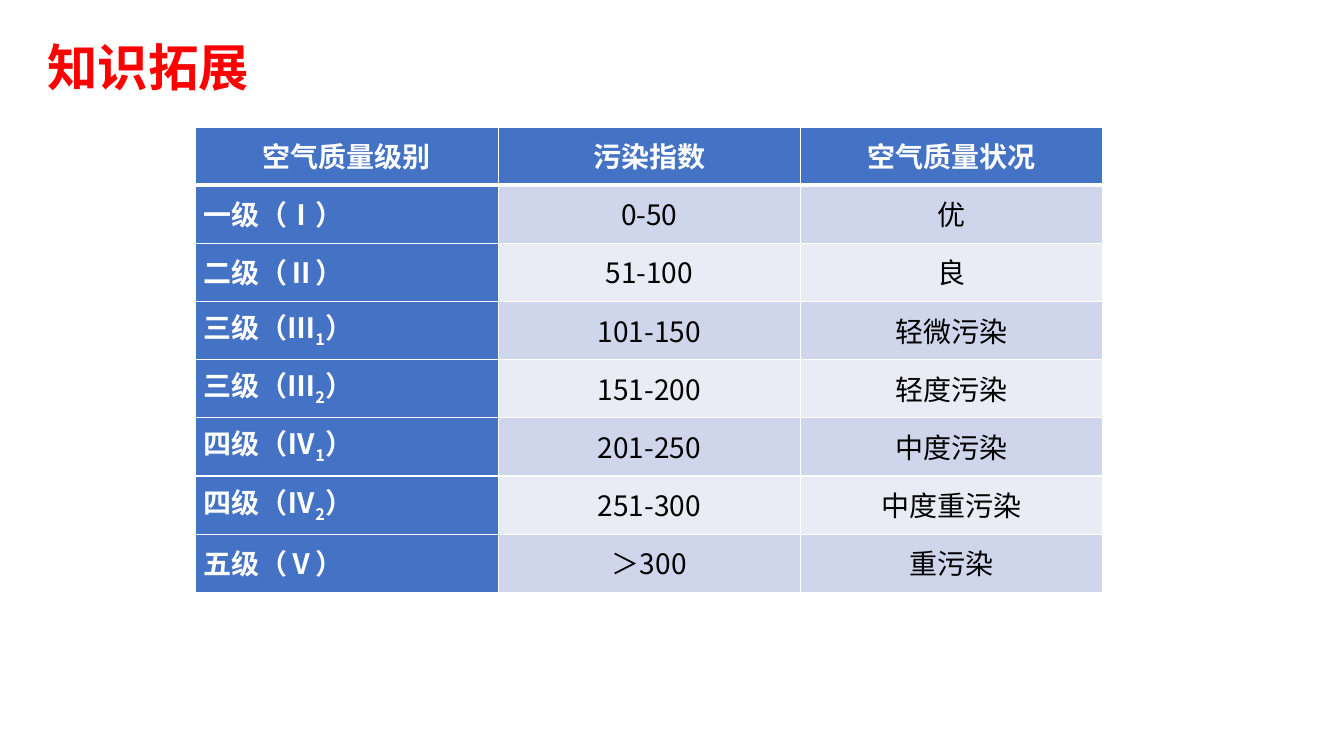
from dataclasses import dataclass

from lxml import etree
from pptx import Presentation
from pptx.dml.color import RGBColor
from pptx.enum.text import MSO_ANCHOR, PP_ALIGN
from pptx.oxml.ns import qn
from pptx.util import Pt

MIDDLE = MSO_ANCHOR.MIDDLE
LEFT, CENTER, JUSTIFY = PP_ALIGN.LEFT, PP_ALIGN.CENTER, PP_ALIGN.JUSTIFY


@dataclass(frozen=True)
class Theme:
    """Colours, type sizes and font of the slide."""
    font: str = "Noto Sans CJK SC"
    title_size: int = 36
    cell_size: int = 20
    line_spacing: int = 28
    title: str = "FF0000"
    heading_fill: str = "4472C4"
    heading_text: str = "FFFFFF"
    body_text: str = "000000"
    bands: tuple = ("CFD5EA", "E9EBF5")
    border: str = "FFFFFF"


THEME = Theme()
HEADINGS = ("空气质量级别", "污染指数", "空气质量状况")
LEVELS = (
    (("一级（Ⅰ）",), "0-50", "优"),
    (("二级（Ⅱ）",), "51-100", "良"),
    (("三级（Ⅲ", "1", "）"), "101-150", "轻微污染"),
    (("三级（Ⅲ", "2", "）"), "151-200", "轻度污染"),
    (("四级（Ⅳ", "1", "）"), "201-250", "中度污染"),
    (("四级（Ⅳ", "2", "）"), "251-300", "中度重污染"),
    (("五级（Ⅴ）",), "＞300", "重污染"),
)


def write_text(frame, pieces, *, size, color, bold=False, align=LEFT, spacing=None):
    """Write a string, or a tuple whose every second piece is a subscript."""
    paragraph = frame.paragraphs[0]
    paragraph.alignment = align
    if spacing:
        paragraph.line_spacing = Pt(spacing)
    for index, piece in enumerate((pieces,) if isinstance(pieces, str) else pieces):
        run = paragraph.add_run()
        run.text = piece
        run.font.size = Pt(size)
        run.font.bold = bold
        run.font.color.rgb = RGBColor.from_string(color)
        run.font.name = THEME.font
        properties = run.font._element
        etree.SubElement(properties, qn("a:ea"), typeface=THEME.font)
        if index % 2:
            properties.set("baseline", "-25000")


def add_borders(cell, top, bottom):
    """Draw the four cell borders, with the top and bottom widths given in points."""
    properties = cell._tc.get_or_add_tcPr()
    for side, width in (("L", 1), ("R", 1), ("T", top), ("B", bottom)):
        line = etree.SubElement(properties, qn(f"a:ln{side}"), w=str(Pt(width)))
        fill = etree.SubElement(line, qn("a:solidFill"))
        etree.SubElement(fill, qn("a:srgbClr"), val=THEME.border)


def format_cell(cell, text, row, column):
    """Fill one cell according to its row and column."""
    is_heading = row == 0 or column == 0
    add_borders(cell, top=3 if row == 1 else 1, bottom=3 if row == 0 else 1)
    cell.fill.solid()
    fill = THEME.heading_fill if is_heading else THEME.bands[(row - 1) % 2]
    cell.fill.fore_color.rgb = RGBColor.from_string(fill)
    cell.vertical_anchor = MIDDLE
    cell.margin_left = cell.margin_right = Pt(5.4)
    cell.margin_top = cell.margin_bottom = Pt(0)
    write_text(cell.text_frame, text, size=THEME.cell_size, bold=is_heading,
               color=THEME.heading_text if is_heading else THEME.body_text,
               align=JUSTIFY if row and column == 0 else CENTER,
               spacing=THEME.line_spacing)


def add_level_table(slide, rows, left, top, column_width, row_height):
    """Add the table of air quality levels."""
    columns = len(rows[0])
    table = slide.shapes.add_table(
        len(rows), columns, Pt(left), Pt(top),
        Pt(column_width * columns), Pt(row_height * len(rows))).table
    table.first_col = True
    for row, texts in enumerate(rows):
        table.rows[row].height = Pt(row_height)
        for column, text in enumerate(texts):
            format_cell(table.cell(row, column), text, row, column)


def place_title(slide, text, left, top, width, height):
    """Move the title placeholder and write the slide title."""
    title = slide.shapes.title
    title.left, title.top = Pt(left), Pt(top)
    title.width, title.height = Pt(width), Pt(height)
    title.text_frame.word_wrap = False
    title.text_frame.vertical_anchor = MIDDLE
    write_text(title.text_frame, text, size=THEME.title_size,
               color=THEME.title, bold=True)


def main():
    """Build and save the slide."""
    deck = Presentation()
    deck.slide_width, deck.slide_height = Pt(960), Pt(540)
    slide = deck.slides.add_slide(deck.slide_layouts[5])
    place_title(slide, "知识拓展", 26.6, 21.6, 160.6, 51)
    add_level_table(slide, (HEADINGS, *LEVELS), 139.8, 90.7, 216, 41.58)
    deck.save("out.pptx")


if __name__ == "__main__":
    main()
